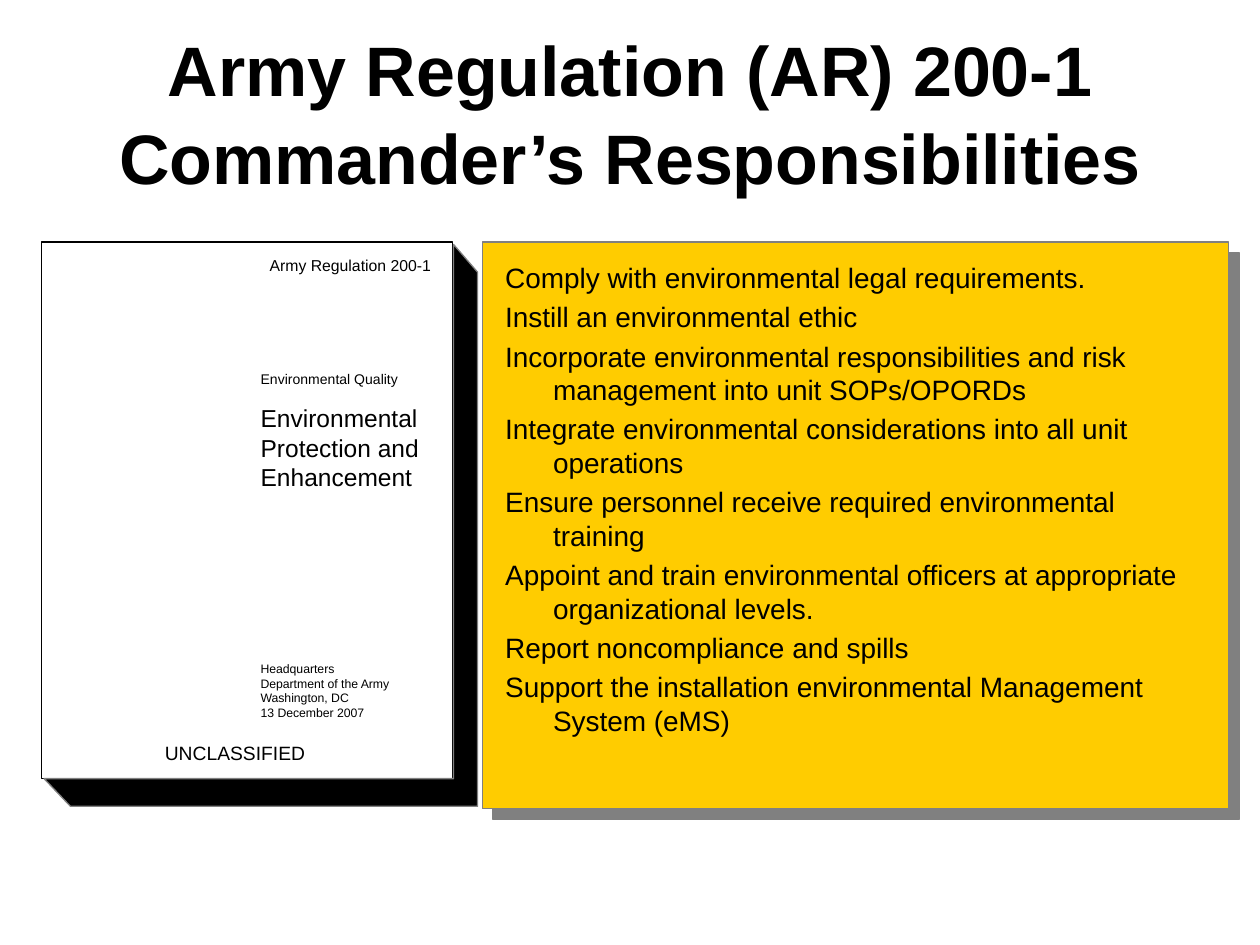
from lxml import etree
from pptx import Presentation
from pptx.dml.color import RGBColor
from pptx.enum.shapes import MSO_SHAPE
from pptx.enum.text import MSO_ANCHOR, MSO_AUTO_SIZE, PP_ALIGN
from pptx.oxml.ns import qn
from pptx.util import Inches, Pt

RECTANGLE = MSO_SHAPE.RECTANGLE
LEFT, CENTER = PP_ALIGN.LEFT, PP_ALIGN.CENTER
TOP, MIDDLE = MSO_ANCHOR.TOP, MSO_ANCHOR.MIDDLE
NO_AUTOFIT = MSO_AUTO_SIZE.NONE

COLORS = {"ink": "000000", "paper": "FFFFFF", "panel": "FFCC00", "edge": "808080"}
FONT = "Arial"
COLUMNS, ROWS = 100, 75

RESPONSIBILITIES = [
    "Comply with environmental legal requirements.",
    "Instill an environmental ethic",
    "Incorporate environmental responsibilities and risk management into unit SOPs/OPORDs",
    "Integrate environmental considerations into all unit operations",
    "Ensure personnel receive required environmental training",
    "Appoint and train environmental officers at appropriate organizational levels.",
    "Report noncompliance and spills",
    "Support the installation environmental Management System (eMS)",
]
PUBLISHER = ["Headquarters", "Department of the Army", "Washington, DC", "13 December 2007"]


def color(name):
    """Return the named palette colour."""
    return RGBColor.from_string(COLORS[name])


def write(paragraph, text, size, bold=False, align=LEFT, before=0, spacing=1.0):
    """Put formatted text into a paragraph."""
    paragraph.text = text
    paragraph.alignment = align
    paragraph.space_before = Pt(before)
    paragraph.line_spacing = spacing
    for run in paragraph.runs:
        run.font.name = FONT
        run.font.size = Pt(size)
        run.font.bold = bold
        run.font.color.rgb = color("ink")


def write_lines(frame, lines, size, **style):
    """Fill a text frame with one paragraph per line."""
    for index, line in enumerate(lines):
        paragraph = frame.add_paragraph() if index else frame.paragraphs[0]
        write(paragraph, line, size, **style)


class SlideBuilder:
    """Holds the presentation, its slide and the grid they share."""

    def __init__(self):
        """Open a slide with a title and a body placeholder."""
        self.presentation = Presentation()
        self.presentation.slide_width = Inches(10)
        self.presentation.slide_height = Inches(7.5)
        self.slide = self.presentation.slides.add_slide(self.presentation.slide_layouts[1])

    def point(self, column, row):
        """Convert a grid position to slide units."""
        return (int(self.presentation.slide_width * column / COLUMNS),
                int(self.presentation.slide_height * row / ROWS))

    def place(self, shape, column, row, width, height):
        """Move a shape to a grid area."""
        shape.left, shape.top = self.point(column, row)
        shape.width, shape.height = self.point(width, height)

    def paint(self, shape, fill, line):
        """Give a shape its fill and outline without a shadow."""
        shape.shadow.inherit = False
        shape.fill.solid()
        shape.fill.fore_color.rgb = color(fill)
        shape.line.color.rgb = color(line)
        shape.line.width = Pt(0.75)

    def title(self, text, area, size):
        """Format the title placeholder."""
        shape = self.slide.shapes.title
        self.place(shape, *area)
        frame = shape.text_frame
        frame.auto_size = NO_AUTOFIT
        frame.vertical_anchor = MIDDLE
        write(frame.paragraphs[0], text, size, bold=True, align=CENTER, spacing=1.05)

    def rectangle(self, area, fill, line):
        """Add a filled rectangle."""
        shape = self.slide.shapes.add_shape(RECTANGLE, *self.point(*area[:2]), *self.point(*area[2:]))
        self.paint(shape, fill, line)
        return shape

    def cast_shadow(self, shape, name, distance):
        """Add a hard shadow to the lower right of a shape."""
        effects = shape._element.spPr.find(qn("a:effectLst"))
        shadow = etree.SubElement(effects, qn("a:outerShdw"), dist=str(Pt(distance)),
                                  dir=str(45 * 60000), algn="ctr", rotWithShape="0")
        etree.SubElement(shadow, qn("a:srgbClr"), val=COLORS[name])

    def outline(self, points, fill, line):
        """Add a closed freeform through grid points."""
        start, *others = [self.point(*point) for point in points]
        builder = self.slide.shapes.build_freeform(*start)
        builder.add_line_segments(others, close=True)
        self.paint(builder.convert_to_shape(), fill, line)

    def label(self, lines, area, size, wrap=True, **style):
        """Add a text box and return its frame."""
        shape = self.slide.shapes.add_textbox(*self.point(*area[:2]), *self.point(*area[2:]))
        shape.text_frame.word_wrap = wrap
        write_lines(shape.text_frame, lines, size, **style)
        return shape.text_frame

    def hanging_list(self, lines, area, size, indent):
        """Fill the body placeholder in front with a hanging list."""
        shape = self.slide.placeholders[1]
        self.place(shape, *area)
        shape.fill.solid()
        shape.fill.fore_color.rgb = color("panel")
        self.slide.shapes._spTree.append(shape._element)
        frame = shape.text_frame
        frame.auto_size = NO_AUTOFIT
        frame.vertical_anchor = TOP
        write_lines(frame, lines, size, before=size * 0.2)
        for paragraph in frame.paragraphs:
            properties = paragraph._p.get_or_add_pPr()
            properties.set("marL", str(Inches(indent)))
            properties.set("indent", str(-Inches(indent)))
            etree.SubElement(properties, qn("a:buNone"))


def main():
    """Build and save the slide."""
    builder = SlideBuilder()
    builder.title("Army Regulation (AR) 200-1\vCommander’s Responsibilities", (5, 2.5, 90, 12.5), 40)

    builder.rectangle((3.3, 19.2, 32.6, 42.6), "paper", "ink")
    builder.label(["Army Regulation 200-1"], (20, 19.8, 15.6, 2.5), 9, wrap=False, align=CENTER)
    subject = builder.label(["Environmental Quality"], (19.7, 28.9, 15.5, 13), 8)
    write(subject.add_paragraph(), "Environmental Protection and Enhancement", 14, before=9.2)
    builder.label(PUBLISHER, (19.7, 52, 13.3, 5.7), 7)
    builder.label(["UNCLASSIFIED"], (12.1, 58.3, 14, 2.8), 11)
    builder.outline([(36, 19.4), (37.9, 21.6), (37.9, 64), (5.6, 64), (3.5, 61.8), (36, 61.8)],
                    "ink", "edge")

    panel = builder.rectangle((38.3, 19.2, 59.2, 45), "panel", "edge")
    builder.cast_shadow(panel, "edge", 8.5)
    builder.hanging_list(RESPONSIBILITIES, (39.1, 20.2, 56.9, 43.8), 16, 0.38)

    builder.presentation.save("out.pptx")


if __name__ == "__main__":
    main()
